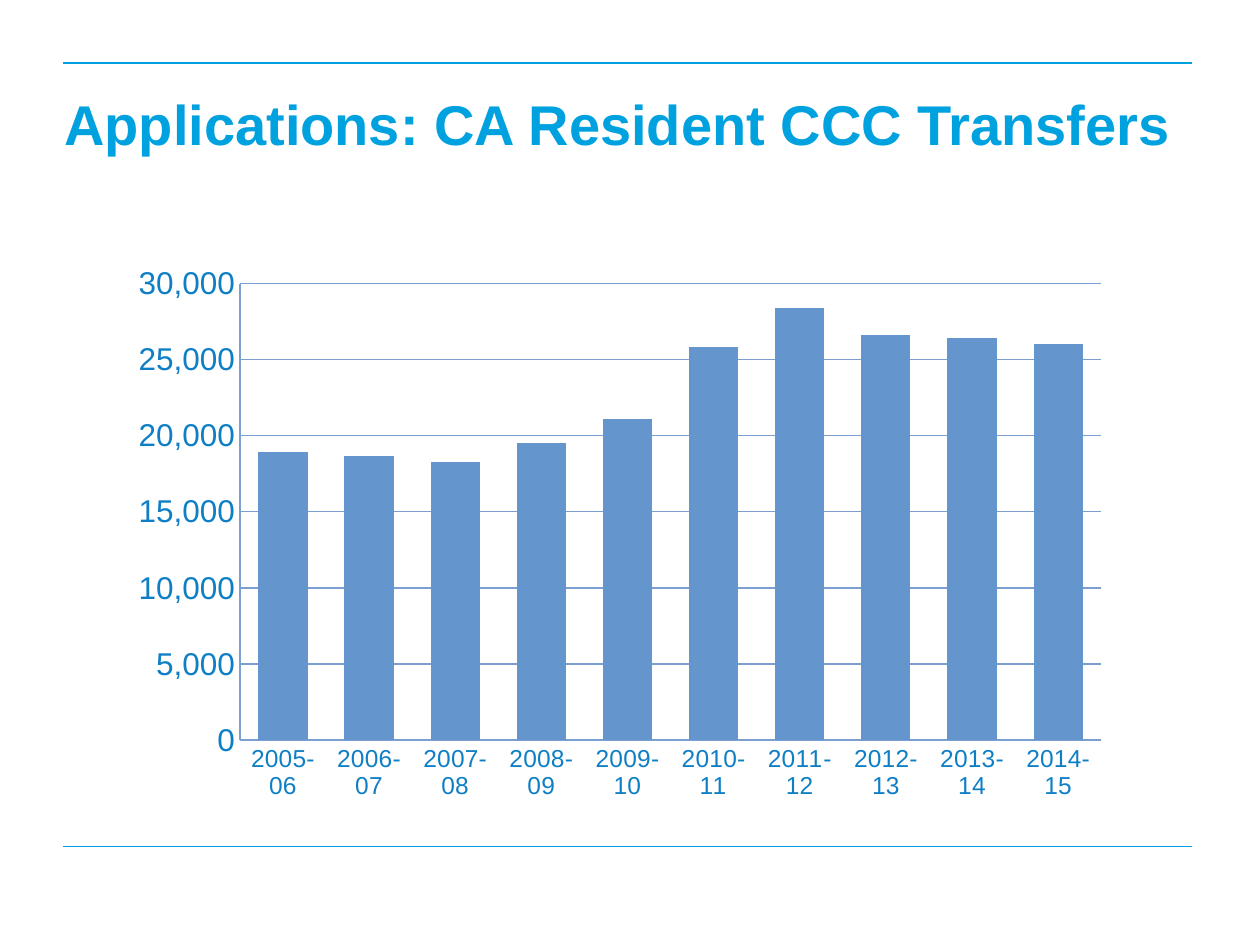
from dataclasses import dataclass

from lxml import etree
from pptx import Presentation
from pptx.chart.data import CategoryChartData
from pptx.dml.color import RGBColor
from pptx.enum.chart import XL_CHART_TYPE, XL_TICK_MARK
from pptx.enum.shapes import MSO_CONNECTOR
from pptx.enum.text import MSO_ANCHOR, PP_ALIGN
from pptx.oxml import parse_xml
from pptx.oxml.ns import nsdecls, qn
from pptx.util import Inches, Pt

COLUMNS = XL_CHART_TYPE.COLUMN_CLUSTERED
STRAIGHT = MSO_CONNECTOR.STRAIGHT
NO_TICK = XL_TICK_MARK.NONE
TOP = MSO_ANCHOR.TOP
LEFT = PP_ALIGN.LEFT


@dataclass(frozen=True)
class Theme:
    accent: RGBColor = RGBColor(0x00, 0xA1, 0xDF)
    label: RGBColor = RGBColor(0x0F, 0x7F, 0xC5)
    bar: RGBColor = RGBColor(0x64, 0x95, 0xCD)
    grid: RGBColor = RGBColor(0x7A, 0x9F, 0xD0)
    font: str = "Arial"
    title_size: int = 32
    value_size: int = 18
    year_size: int = 14
    line_width: float = 0.75


@dataclass(frozen=True)
class Rule:
    y: float
    left: float = 0.5
    right: float = 9.46


THEME = Theme()
RULES = [Rule(0.5), Rule(6.72)]
FIRST_YEAR = 2005
APPLICATIONS = [18900, 18700, 18300, 19500, 21100,
                25800, 28400, 26600, 26400, 26000]
PLOT_LAYOUT = {"x": 0.12, "y": 0.05, "w": 0.86, "h": 0.82}


def set_format(target, values: dict) -> None:
    for name, value in values.items():
        setattr(target, name, value)


def style_font(font, size: int, color: RGBColor, bold: bool = False) -> None:
    set_format(font, {"name": THEME.font, "size": Pt(size), "bold": bold})
    font.color.rgb = color


def style_line(line, color: RGBColor) -> None:
    line.color.rgb = color
    line.width = Pt(THEME.line_width)


def draw_rule(slide, rule: Rule) -> None:
    connector = slide.shapes.add_connector(
        STRAIGHT, Inches(rule.left), Inches(rule.y),
        Inches(rule.right), Inches(rule.y))
    style_line(connector.line, THEME.accent)
    etree.SubElement(connector._element.spPr, qn("a:effectLst"))


def fill_title(slide, text: str) -> None:
    title = slide.shapes.title
    set_format(title, {"left": Inches(0.51), "top": Inches(0.71),
                       "width": Inches(8.96), "height": Inches(0.54)})
    frame = title.text_frame
    set_format(frame, {"margin_left": 0, "margin_top": 0, "margin_right": 0,
                       "margin_bottom": 0, "word_wrap": True,
                       "vertical_anchor": TOP})
    frame.text = text
    heading = frame.paragraphs[0]
    heading.alignment = LEFT
    style_font(heading.font, THEME.title_size, THEME.accent, bold=True)


def place_plot(chart) -> None:
    """Fix the inner plot area as fractions of the chart frame."""
    plot_area = chart._chartSpace.chart.plotArea
    for old_layout in plot_area.findall(qn("c:layout")):
        plot_area.remove(old_layout)
    sizes = "".join(f'<c:{side} val="{share}"/>'
                    for side, share in PLOT_LAYOUT.items())
    plot_area.insert(0, parse_xml(
        f'<c:layout {nsdecls("c")}><c:manualLayout>'
        '<c:layoutTarget val="inner"/><c:xMode val="edge"/>'
        f'<c:yMode val="edge"/>{sizes}</c:manualLayout></c:layout>'))


def draw_applications(slide) -> None:
    data = CategoryChartData(number_format="##,##0")
    data.categories = [f"{year}-{(year + 1) % 100:02d}" for year in
                       range(FIRST_YEAR, FIRST_YEAR + len(APPLICATIONS))]
    data.add_series("Series 1", APPLICATIONS)
    chart = slide.shapes.add_chart(
        COLUMNS, Inches(0.95), Inches(2.03), Inches(7.95), Inches(4.42),
        data).chart
    set_format(chart, {"has_legend": False, "has_title": False})
    style_font(chart.font, THEME.value_size, THEME.label)

    # Columns
    plot = chart.plots[0]
    set_format(plot, {"gap_width": 75, "overlap": -25,
                      "vary_by_categories": False})
    bars = plot.series[0].format
    bars.fill.solid()
    bars.fill.fore_color.rgb = THEME.bar
    bars.line.fill.background()

    # Axes
    years, values = chart.category_axis, chart.value_axis
    for axis, size in ((years, THEME.year_size), (values, THEME.value_size)):
        set_format(axis, {"major_tick_mark": NO_TICK,
                          "minor_tick_mark": NO_TICK})
        style_line(axis.format.line, THEME.grid)
        style_font(axis.tick_labels.font, size, THEME.label)
    set_format(values, {"minimum_scale": 0, "maximum_scale": 30000,
                        "major_unit": 5000, "has_major_gridlines": True})
    set_format(values.tick_labels, {"number_format": "##,##0",
                                    "number_format_is_linked": False})
    style_line(values.major_gridlines.format.line, THEME.grid)
    place_plot(chart)


def main() -> None:
    deck = Presentation()
    set_format(deck, {"slide_width": Inches(10), "slide_height": Inches(7.5)})
    slide = deck.slides.add_slide(deck.slide_layouts[5])

    # Rules above and below the content
    for rule in RULES:
        draw_rule(slide, rule)

    # Title and chart
    fill_title(slide, "Applications: CA Resident CCC Transfers")
    draw_applications(slide)
    deck.save("out.pptx")


if __name__ == "__main__":
    main()
